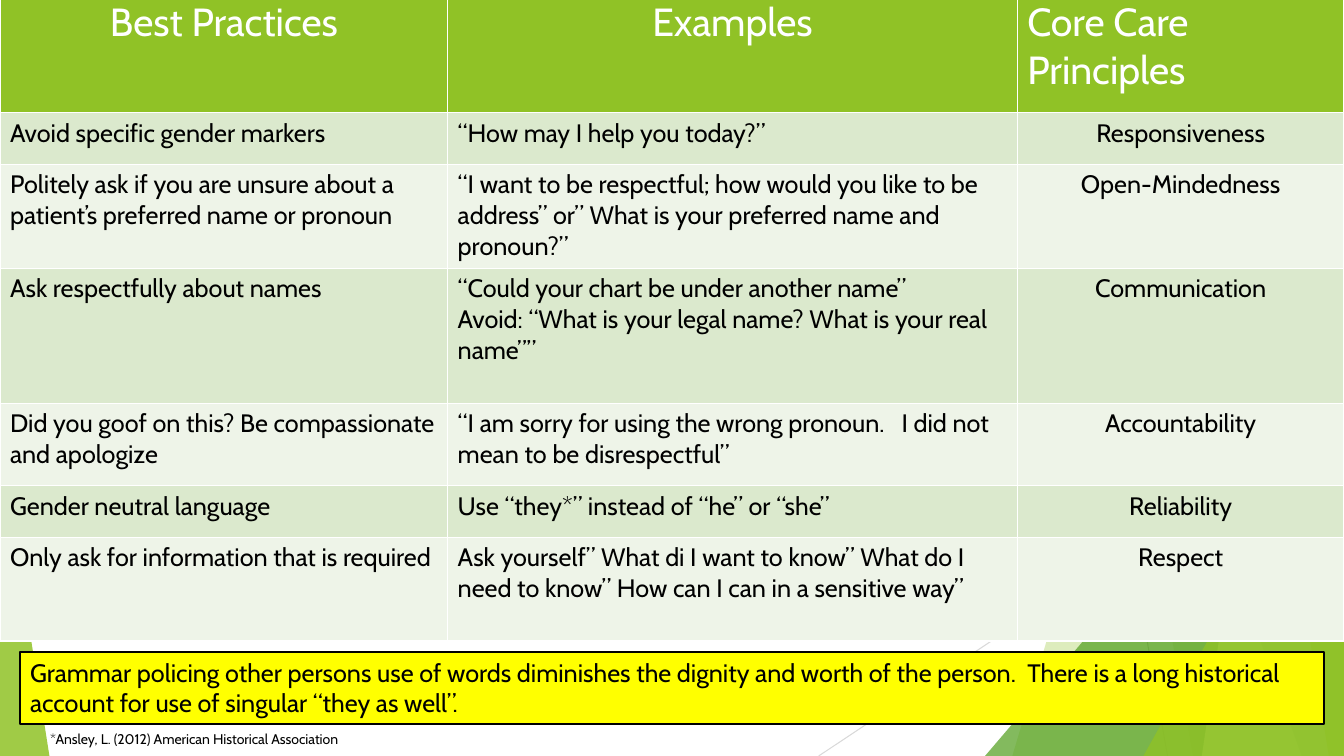
from lxml.etree import SubElement
from pptx import Presentation
from pptx.dml.color import RGBColor
from pptx.enum.shapes import MSO_CONNECTOR, MSO_SHAPE
from pptx.enum.text import MSO_ANCHOR, MSO_AUTO_SIZE as AUTO, PP_ALIGN
from pptx.oxml.ns import qn
from pptx.util import Pt

PX = 9144  # 100 px to the inch
W, H = 1333, 750
FONT = "Cabin"
COLORS = {
    "white": "FFFFFF", "black": "000000", "yellow": "FFFF00",
    "green": "90C226", "leaf": "54A021", "forest": "3F7819", "lime": "C0E474",
    "band": "DBE9CD", "pale": "EEF4E8", "gray": "BFBFBF", "silver": "D9D9D9",
}
COLUMNS = [444, 565, 324]
ROW_HEIGHTS = [118, 51, 103, 134, 82, 51, 103]
ROWS = [
    ("Best Practices", "Examples", "Core Care Principles"),
    ("Avoid specific gender markers", "“How may I help you today?”", "Responsiveness"),
    ("Politely ask if you are unsure about a patient’s preferred name or pronoun",
     "“I want to be respectful; how would you like to be address” or” "
     "What is your preferred name and pronoun?”",
     "Open-Mindedness"),
    ("Ask respectfully about names",
     "“Could your chart be under another name”\n"
     "Avoid: “What is your legal name? What is your real name””",
     "Communication"),
    ("Did you goof on this? Be compassionate and apologize",
     "“I am sorry for using the wrong pronoun.   I did not mean to be disrespectful”",
     "Accountability"),
    ("Gender neutral language", "Use “they*” instead of “he” or “she”", "Reliability"),
    ("Only ask for information that is required",
     "Ask yourself” What di I want to know” What do I need to know” "
     "How can I can in a sensitive way”",
     "Respect"),
]
GRAMMAR_NOTE = (
    "Grammar policing other persons use of words diminishes the dignity and worth "
    "of the person.  There is a long historical account for use of singular “they as well”."
)


def rgb(name):
    return RGBColor.from_string(COLORS[name])


def px(*values):
    return [v * PX for v in values]


def paint(s, color, opacity=100):
    """Fill a shape, without outline or shadow."""
    s.shadow.inherit = False
    s.fill.solid()
    s.fill.fore_color.rgb = rgb(color)
    s.line.fill.background()
    if opacity < 100:
        clr = s._element.spPr.find(qn("a:solidFill")).find(qn("a:srgbClr"))
        SubElement(clr, qn("a:alpha"), val=str(opacity * 1000))


def write(tf, text, size, color="black", align=PP_ALIGN.LEFT):
    tf.text = text
    for p in tf.paragraphs:
        p.alignment = align
        p.font.name = FONT
        p.font.size = Pt(size)
        p.font.bold = False
        p.font.color.rgb = rgb(color)


def add_line(slide, ends, color):
    s = slide.shapes.add_connector(MSO_CONNECTOR.STRAIGHT, *px(*ends))
    s.line.color.rgb = rgb(color)
    s.line.width = Pt(0.75)
    SubElement(s._element.spPr, qn("a:effectLst"))


def add_shard(slide, top_x, bottom_x, color, opacity):
    """A full-height panel from a slanted left edge to the slide's right edge."""
    fb = slide.shapes.build_freeform(top_x, -1, scale=PX)
    fb.add_line_segments([(W, -1), (W, H), (bottom_x, H)], close=True)
    paint(fb.convert_to_shape(), color, opacity)


def add_triangle(slide, left, top, width, apex, color, opacity):
    s = slide.shapes.add_shape(
        MSO_SHAPE.ISOSCELES_TRIANGLE, *px(left, top, width, H - top))
    s.adjustments[0] = apex
    paint(s, color, opacity)


def add_backdrop(slide):
    add_line(slide, (1025, 0, 1158, H), "gray")
    add_line(slide, (W, 403, 812, H), "silver")
    add_shard(slide, 1228, 1004, "green", 30)
    add_shard(slide, 1050, 1183, "green", 20)
    add_triangle(slide, 977, 333, 356, 1, "leaf", 72)
    add_shard(slide, 1021, 1291, "forest", 70)
    add_shard(slide, 1303, 1192, "lime", 70)
    add_shard(slide, 1196, 1318, "green", 65)
    add_triangle(slide, 1134, 393, 199, 1, "green", 80)
    add_triangle(slide, 0, 439, 49, 0, "green", 85)


def add_practices_table(slide):
    table = slide.shapes.add_table(
        len(ROWS), len(COLUMNS), *px(0, -6, W, sum(ROW_HEIGHTS))).table
    for column, width in zip(table.columns, COLUMNS):
        column.width = width * PX
    for row, height in zip(table.rows, ROW_HEIGHTS):
        row.height = height * PX
    for i, texts in enumerate(ROWS):
        header = i == 0
        fill = "green" if header else "band" if i % 2 else "pale"
        for j, text in enumerate(texts):
            cell = table.cell(i, j)
            cell.fill.solid()
            cell.fill.fore_color.rgb = rgb(fill)
            centered = header != (j == 2)
            write(cell.text_frame, text, 28 if header else 18,
                  "white" if header else "black",
                  PP_ALIGN.CENTER if centered else PP_ALIGN.LEFT)


def add_note_box(slide, text):
    s = slide.shapes.add_shape(MSO_SHAPE.RECTANGLE, *px(20, 647, 1293, 71))
    paint(s, "yellow")
    s.line.color.rgb = rgb("black")
    s.line.width = Pt(1.5)
    tf = s.text_frame
    tf.word_wrap = True
    tf.auto_size = AUTO.SHAPE_TO_FIT_TEXT
    tf.vertical_anchor = MSO_ANCHOR.TOP
    write(tf, text, 18)


def add_citation(slide, text):
    tf = slide.shapes.add_textbox(*px(40, 720, 333, 27)).text_frame
    tf.word_wrap = False
    tf.auto_size = AUTO.SHAPE_TO_FIT_TEXT
    write(tf, text, 10)


def main():
    prs = Presentation()
    prs.slide_width, prs.slide_height = px(W, H)
    slide = prs.slides.add_slide(prs.slide_layouts[6])
    add_backdrop(slide)
    add_practices_table(slide)
    add_note_box(slide, GRAMMAR_NOTE)
    add_citation(slide, "*Ansley, L. (2012) American Historical Association")
    prs.save("out.pptx")


if __name__ == "__main__":
    main()
